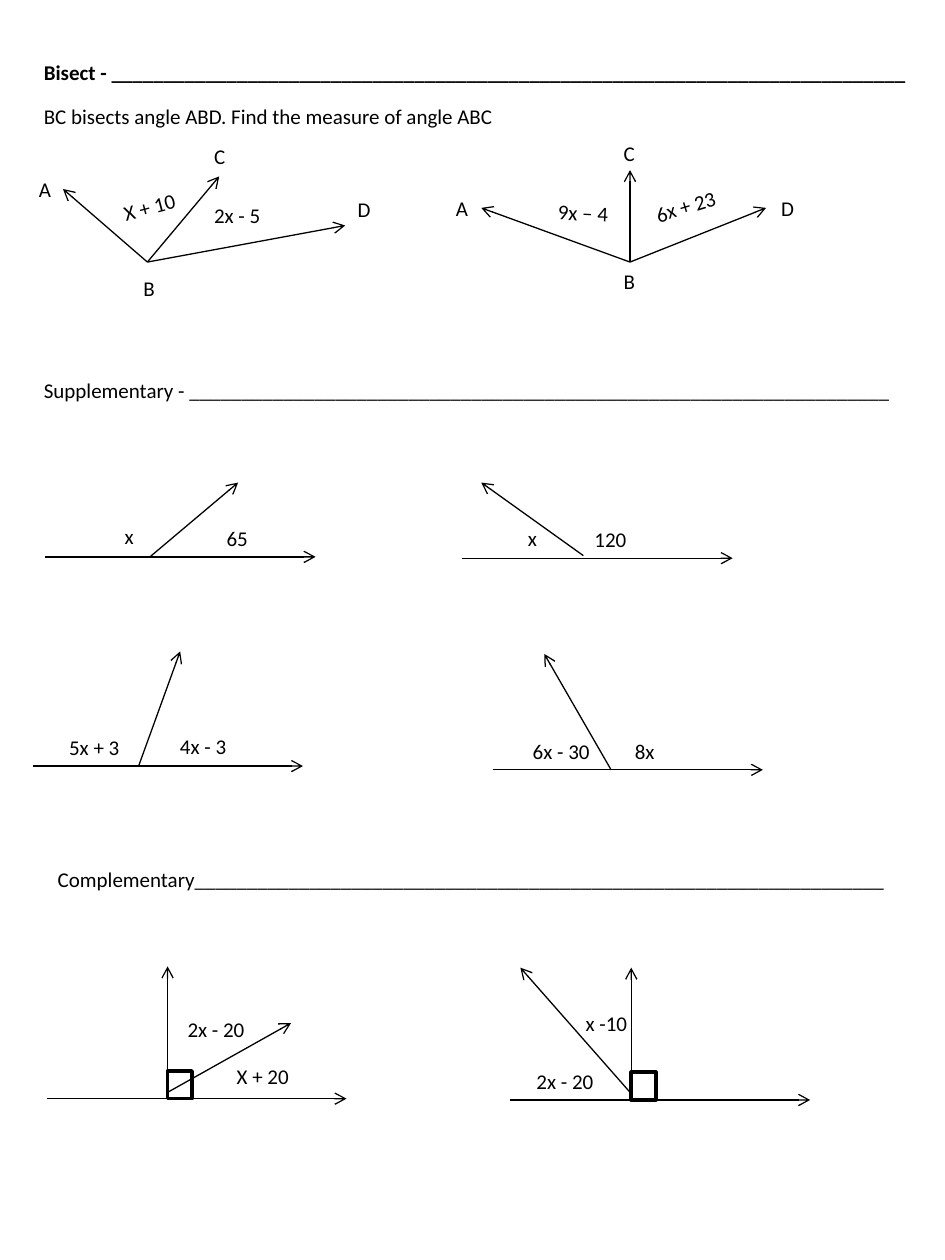
import pptx
import pptx.util
import pptx.dml.color
import pptx.enum.shapes
import pptx.enum.text
import lxml.etree

COLORS = {"ink": "000000"}
INK = pptx.dml.color.RGBColor.from_string(COLORS["ink"])

worksheet = pptx.Presentation()
worksheet.slide_width = pptx.util.Inches(7.5)
worksheet.slide_height = pptx.util.Inches(10)
COL = worksheet.slide_width / 75
ROW = worksheet.slide_height / 100
page = worksheet.slides.add_slide(worksheet.slide_layouts[6])


def write(words, left, top, width, turn=0, bold=False):
    label = page.shapes.add_textbox(
        round(left * COL), round(top * ROW), round(width * COL), round(3 * ROW))
    label.rotation = turn
    frame = label.text_frame
    frame.word_wrap = False
    frame.auto_size = pptx.enum.text.MSO_AUTO_SIZE.SHAPE_TO_FIT_TEXT
    frame.text = words
    font = frame.paragraphs[0].runs[0].font
    font.name = "Calibri"
    font.size = pptx.util.Pt(12)
    font.bold = bold
    font.color.rgb = INK


def draw_ray(start, tip):
    ray = page.shapes.add_connector(
        pptx.enum.shapes.MSO_CONNECTOR.STRAIGHT,
        round(start[0] * COL), round(start[1] * ROW),
        round(tip[0] * COL), round(tip[1] * ROW))
    ray.line.color.rgb = INK
    ray.line.width = pptx.util.Pt(0.75)
    outline = ray.line._get_or_add_ln()
    lxml.etree.SubElement(outline, pptx.oxml.ns.qn("a:tailEnd"), type="arrow")
    properties = ray._element.spPr
    lxml.etree.SubElement(properties, pptx.oxml.ns.qn("a:effectLst"))


write("Bisect - " + "_" * 76, 2.5, 4.2, 71.4, bold=True)
write("BC bisects angle ABD. Find the measure of angle ABC", 2.5, 7.7, 38.4)
write("Supplementary - " + "_" * 67, 2.5, 29.5, 70)
write("Complementary" + "_" * 66, 3.6, 68.3, 68.5)

bisected_angles = [
    ((11.7, 20.8), [(5, 15), (27.4, 17.9), (17.4, 14)]),
    ((50, 20.8), [(38.2, 16.5), (50, 13.5), (60.8, 16.5)]),
]
for vertex, tips in bisected_angles:
    for tip in tips:
        draw_ray(vertex, tip)

BASE_LENGTH = 21.45
supplementary_angles = [
    (3.6, 44.2, (11.9, 44.2), (18.9, 38.3)),
    (36.7, 44.3, (46.3, 44.1), (38.2, 38.3)),
    (2.6, 60.8, (11, 60.8), (14.3, 51.7)),
    (39.1, 61.1, (48.5, 61.1), (43.2, 51.9)),
]
for base_left, base_height, vertex, tip in supplementary_angles:
    draw_ray((base_left, base_height), (base_left + BASE_LENGTH, base_height))
    draw_ray(vertex, tip)

complementary_angles = [
    ((13.3, 86.7), (23.1, 81.2)),
    ((50.1, 86.8), (41.3, 76.8)),
]
for vertex, tip in complementary_angles:
    corner, height = vertex
    base_height = height + 0.5
    draw_ray((corner - 9.6, base_height), (corner + 14.2, base_height))
    draw_ray(vertex, (corner, height - 10))
    right_angle = page.shapes.add_shape(
        pptx.enum.shapes.MSO_SHAPE.RECTANGLE,
        round(corner * COL), round((base_height - 2.2) * ROW),
        round(1.95 * COL), round(2.2 * ROW))
    right_angle.shadow.inherit = False
    right_angle.fill.background()
    right_angle.line.color.rgb = INK
    right_angle.line.width = pptx.util.Pt(2)
    draw_ray(vertex, tip)

angle_labels = [
    ("A", 2.1, 13.5, 3), ("B", 10.4, 21.4, 2.9),
    ("C", 16, 10.9, 2.9), ("D", 27.4, 15.1, 3.1),
    ("2x - 5", 16, 15.6, 5.8), ("X + 10", 8.8, 14.9, 6.2, 345.3),
    ("A", 35.2, 15, 3), ("B", 48.5, 20.8, 2.9),
    ("C", 48.5, 10.7, 2.9), ("D", 61, 15, 3.1),
    ("9x – 4", 43.3, 15.4, 6.5, 2.9), ("6x + 23", 51, 14.8, 7.3, 343.1),
    ("x", 8.9, 41.1, 2.8), ("65", 17, 41.2, 3.7),
    ("x", 40.9, 41.2, 2.8), ("120", 46.2, 41.3, 4.6),
    ("5x + 3", 4.5, 57.8, 6.1), ("4x - 3", 13.3, 57.7, 5.8),
    ("6x - 30", 41.3, 58.1, 6.6), ("8x", 49.4, 58.1, 3.6),
    ("2x - 20", 13.9, 80.2, 6.6), ("X + 20", 17.8, 83.9, 6.2),
    ("x -10", 45.5, 79.7, 5.4), ("2x - 20", 41.6, 84.3, 6.6),
]
for label in angle_labels:
    write(*label)

worksheet.save("out.pptx")
